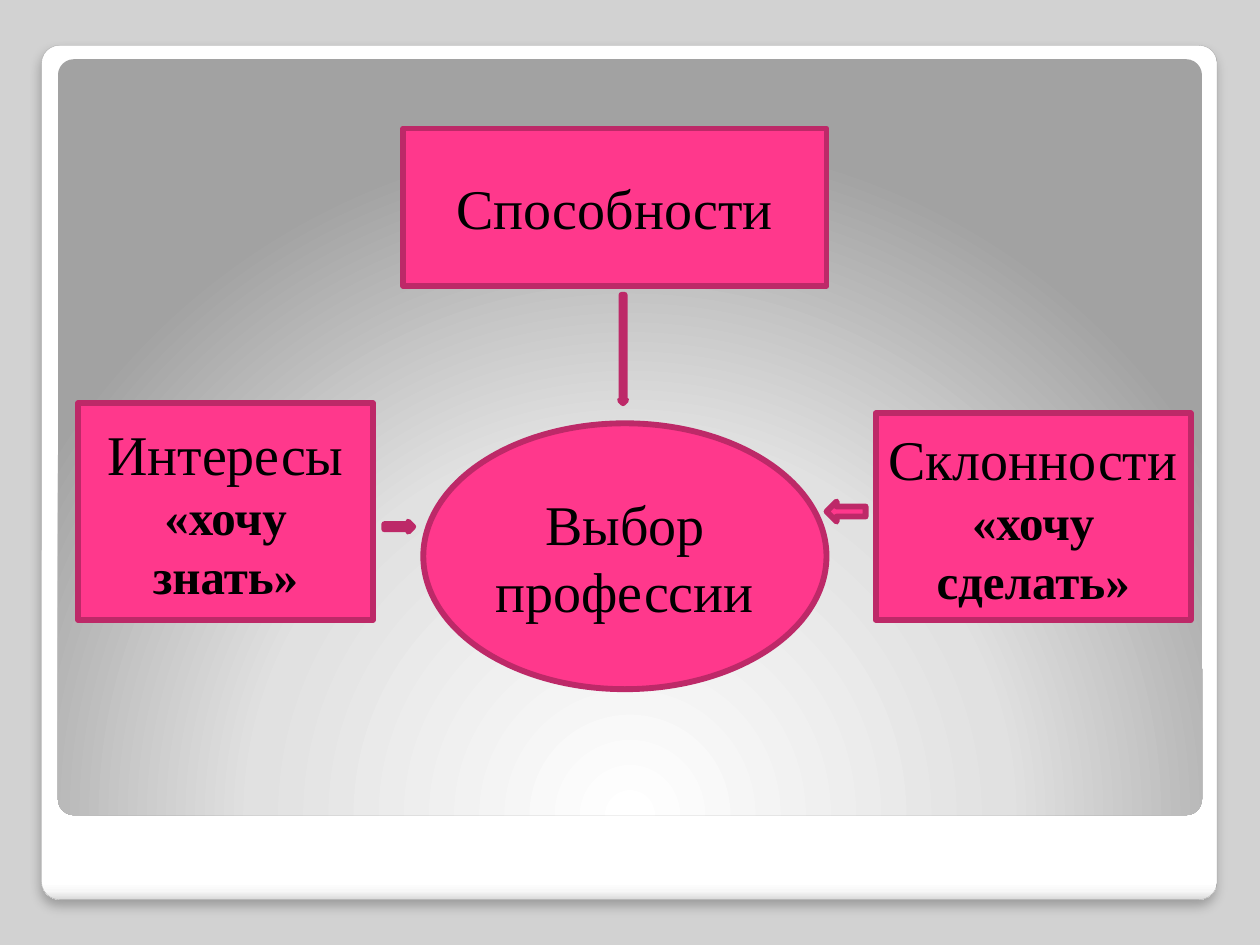
import pptx
import pptx.dml.color
import pptx.enum.shapes
import pptx.enum.text
import pptx.oxml
import pptx.oxml.ns
import pptx.util

COLORS = {
    "background": "D2D2D2",
    "frame_line": "A4A4A4",
    "pink": "FF388C",
    "border": "BD2968",
    "text": "000000",
}
FRAME_STOPS = [(0, "FFFFFF"), (98, "FFFFFF"), (99, "F7F7F7"), (100, "DADADA")]
PANEL_STOPS = [(0, "FFFFFF"), (55, "E1E1E1"), (100, "A2A2A2")]
LINEAR_DOWN = '<a:lin ang="5400000" scaled="0"/>'
RADIAL_BELOW = ('<a:path path="circle"><a:fillToRect l="50000" t="175000" '
                'r="50000" b="-75000"/></a:path>')
SHAPES = pptx.enum.shapes.MSO_SHAPE


def rgb(name):
    return pptx.dml.color.RGBColor.from_string(COLORS[name])


def make_element(tag, attributes, content):
    namespace = pptx.oxml.ns.nsdecls("a")
    return pptx.oxml.parse_xml(
        f"<a:{tag} {namespace} {attributes}>{content}</a:{tag}>")


class DiagramSlide:
    """Holds the style and the slide; boxes are in percent of the slide's size."""
    font_name = "Times New Roman"
    title_size = 32
    note_size = 28
    border_width = 3.35
    corner = 0.021

    def __init__(self, presentation):
        self.width = presentation.slide_width
        self.height = presentation.slide_height
        self.slide = presentation.slides.add_slide(presentation.slide_layouts[6])
        self.slide.background.fill.solid()
        self.slide.background.fill.fore_color.rgb = rgb("background")

    def place(self, kind, left, top, width, height):
        shape = self.slide.shapes.add_shape(
            kind,
            round(self.width * left / 100), round(self.height * top / 100),
            round(self.width * width / 100), round(self.height * height / 100))
        shape.shadow.inherit = False
        return shape

    def panel(self, box, stops, direction):
        shape = self.place(SHAPES.ROUNDED_RECTANGLE, *box)
        shape.adjustments[0] = self.corner
        shape.line.fill.background()
        shape.fill.gradient()
        stop_xml = "".join(
            f'<a:gs pos="{position * 1000}"><a:srgbClr val="{color}"/></a:gs>'
            for position, color in stops)
        properties = shape._element.spPr
        properties.replace(
            properties.find(pptx.oxml.ns.qn("a:gradFill")),
            make_element("gradFill", 'rotWithShape="1"',
                         f"<a:gsLst>{stop_xml}</a:gsLst>{direction}"))
        return shape

    def frame(self, box):
        shape = self.panel(box, FRAME_STOPS, LINEAR_DOWN)
        shape.line.color.rgb = rgb("frame_line")
        shape.line.width = pptx.util.Pt(0.16)
        effects = shape._element.spPr.find(pptx.oxml.ns.qn("a:effectLst"))
        effects.append(make_element(
            "outerShdw",
            'blurRad="76200" dist="50800" dir="5400000" algn="tl" rotWithShape="0"',
            '<a:srgbClr val="000000"><a:alpha val="25000"/></a:srgbClr>'))

    def pink_shape(self, kind, box):
        shape = self.place(kind, *box)
        shape.fill.solid()
        shape.fill.fore_color.rgb = rgb("pink")
        shape.line.color.rgb = rgb("border")
        shape.line.width = pptx.util.Pt(self.border_width)
        return shape

    def topic(self, kind, box, title, note=None):
        frame = self.pink_shape(kind, box).text_frame
        frame.word_wrap = True
        frame.vertical_anchor = pptx.enum.text.MSO_ANCHOR.MIDDLE
        self.add_text(frame.paragraphs[0], title, self.title_size)
        if note:
            self.add_text(frame.add_paragraph(), note, self.note_size, bold=True)

    def add_text(self, paragraph, text, size, bold=False):
        paragraph.alignment = pptx.enum.text.PP_ALIGN.CENTER
        run = paragraph.add_run()
        run.text = text
        run.font.name = self.font_name
        run.font.size = pptx.util.Pt(size)
        run.font.bold = bold
        run.font.color.rgb = rgb("text")


def main():
    presentation = pptx.Presentation()
    presentation.slide_width = pptx.util.Inches(10)
    presentation.slide_height = pptx.util.Inches(7.5)
    diagram = DiagramSlide(presentation)

    # Backdrop: white frame with a grey panel
    diagram.frame((3.3, 4.8, 93.3, 90.4))
    diagram.panel((4.6, 6.27, 90.8, 80), PANEL_STOPS, RADIAL_BELOW)

    # Three factors around the choice of profession
    diagram.topic(SHAPES.RECTANGLE, (32, 13.6, 33.6, 16.67), "Способности")
    diagram.topic(SHAPES.RECTANGLE, (6.2, 42.67, 23.4, 22.93),
                  "Интересы", "«хочу знать»")
    diagram.topic(SHAPES.RECTANGLE, (69.5, 43.73, 25, 21.87),
                  "Склонности", "«хочу сделать»")
    diagram.topic(SHAPES.OVAL, (33.6, 44.8, 32, 28.13), "Выбор профессии")

    # Block arrows pointing to the centre
    diagram.pink_shape(SHAPES.DOWN_ARROW, (49.2, 31.2, 0.5, 11.47))
    diagram.pink_shape(SHAPES.RIGHT_ARROW, (30.5, 55.2, 2.3, 1.07))
    diagram.pink_shape(SHAPES.LEFT_ARROW, (65.6, 53.07, 3.1, 2.13))

    presentation.save("out.pptx")


if __name__ == "__main__":
    main()
